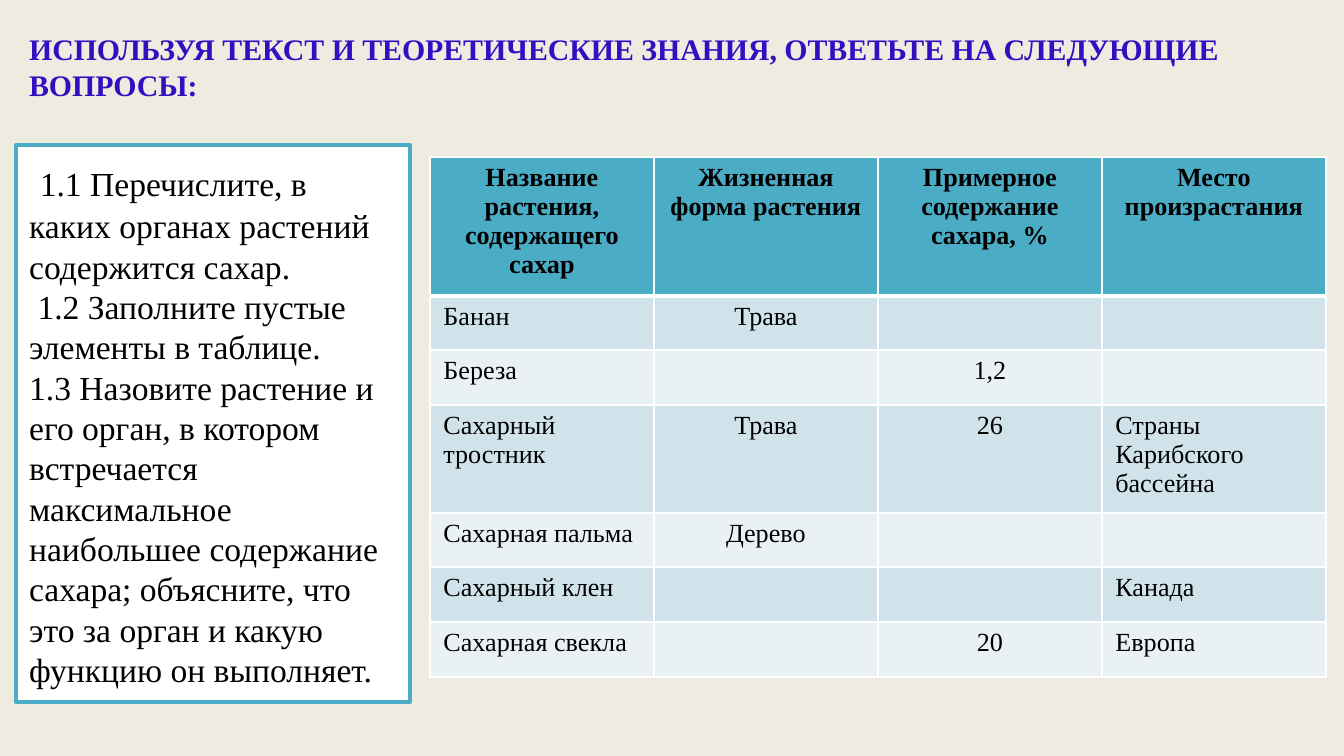
import lxml.etree
import pptx
import pptx.dml.color
import pptx.enum.shapes
import pptx.enum.text
import pptx.oxml.ns
import pptx.util

PX = 914400 / 134.4
FONT = "Times New Roman"
LEFT = pptx.enum.text.PP_ALIGN.LEFT
CENTER = pptx.enum.text.PP_ALIGN.CENTER


def color(hex_string):
    return pptx.dml.color.RGBColor.from_string(hex_string)


def add_span(para, text, size, hex_string="000000", bold=False, font=FONT):
    span = para.add_run()
    span.text = text
    span.font.size = pptx.util.Pt(size)
    span.font.name = font
    span.font.bold = bold
    span.font.color.rgb = color(hex_string)


deck = pptx.Presentation()
deck.slide_width, deck.slide_height = round(1344 * PX), round(756 * PX)
page = deck.slides.add_slide(deck.slide_layouts[6])
page.background.fill.solid()
page.background.fill.fore_color.rgb = color("EEECE1")

# Heading
heading = page.shapes.add_textbox(*[round(n * PX) for n in (16, 19, 1302, 95)])
heading.text_frame.word_wrap = True
heading.text_frame.vertical_anchor = pptx.enum.text.MSO_ANCHOR.MIDDLE
add_span(heading.text_frame.paragraphs[0],
         "ИСПОЛЬЗУЯ ТЕКСТ И ТЕОРЕТИЧЕСКИЕ ЗНАНИЯ, ОТВЕТЬТЕ НА СЛЕДУЮЩИЕ ВОПРОСЫ:",
         16, "350EC2", bold=True)

# Question box
box = page.shapes.add_shape(pptx.enum.shapes.MSO_SHAPE.RECTANGLE,
                            *[round(n * PX) for n in (16, 145, 394, 557)])
box.shadow.inherit = False
box.fill.solid()
box.fill.fore_color.rgb = color("FFFFFF")
box.line.color.rgb = color("4BACC6")
box.line.width = pptx.util.Pt(2)
frame = box.text_frame
frame.word_wrap = True
frame.vertical_anchor = pptx.enum.text.MSO_ANCHOR.TOP
questions = [
    "1.1 Перечислите, в каких органах растений содержится сахар.",
    " 1.2 Заполните пустые элементы в таблице.",
    "1.3 Назовите растение и его орган, в котором встречается максимальное "
    "наибольшее содержание сахара; объясните, что это за орган и какую "
    "функцию он выполняет.",
]
for index, question in enumerate(questions):
    para = frame.add_paragraph() if index else frame.paragraphs[0]
    para.alignment = LEFT
    if index == 0:
        add_span(para, " ", 24, font="Karla")
    add_span(para, question, 18)

# Plant table
rows = [
    ["Название растения, содержащего сахар", "Жизненная форма растения",
     "Примерное содержание сахара, %", "Место произрастания"],
    ["Банан", "Трава", "", ""],
    ["Береза", "", "1,2", ""],
    ["Сахарный тростник", "Трава", "26", "Страны Карибского бассейна"],
    ["Сахарная пальма", "Дерево", "", ""],
    ["Сахарный клен", "", "", "Канада"],
    ["Сахарная свекла", "", "20", "Европа"],
]
row_heights = [138, 54, 55, 108, 54, 55, 55]
table = page.shapes.add_table(
    len(rows), 4, *[round(n * PX) for n in (430, 157, 896, sum(row_heights))]).table
table.first_row = table.horz_banding = False
for column in table.columns:
    column.width = round(224 * PX)

for r, texts in enumerate(rows):
    table.rows[r].height = round(row_heights[r] * PX)
    header = r == 0
    fill = "4BACC6" if header else ("E9F1F5", "D0E3EA")[r % 2]
    for c, text in enumerate(texts):
        cell = table.cell(r, c)
        para = cell.text_frame.paragraphs[0]
        para.alignment = CENTER if header or c in (1, 2) else LEFT
        if text:
            add_span(para, text, 14, bold=header)

        # White borders, heavier under the header; they precede the fill
        properties = cell._tc.get_or_add_tcPr()
        for side in "LRTB":
            heavy = (header and side == "B") or (r == 1 and side == "T")
            line = lxml.etree.SubElement(
                properties, pptx.oxml.ns.qn("a:ln" + side),
                w=str(pptx.util.Pt(3 if heavy else 1)))
            solid = lxml.etree.SubElement(line, pptx.oxml.ns.qn("a:solidFill"))
            lxml.etree.SubElement(solid, pptx.oxml.ns.qn("a:srgbClr"), val="FFFFFF")
        cell.fill.solid()
        cell.fill.fore_color.rgb = color(fill)

deck.save("out.pptx")
